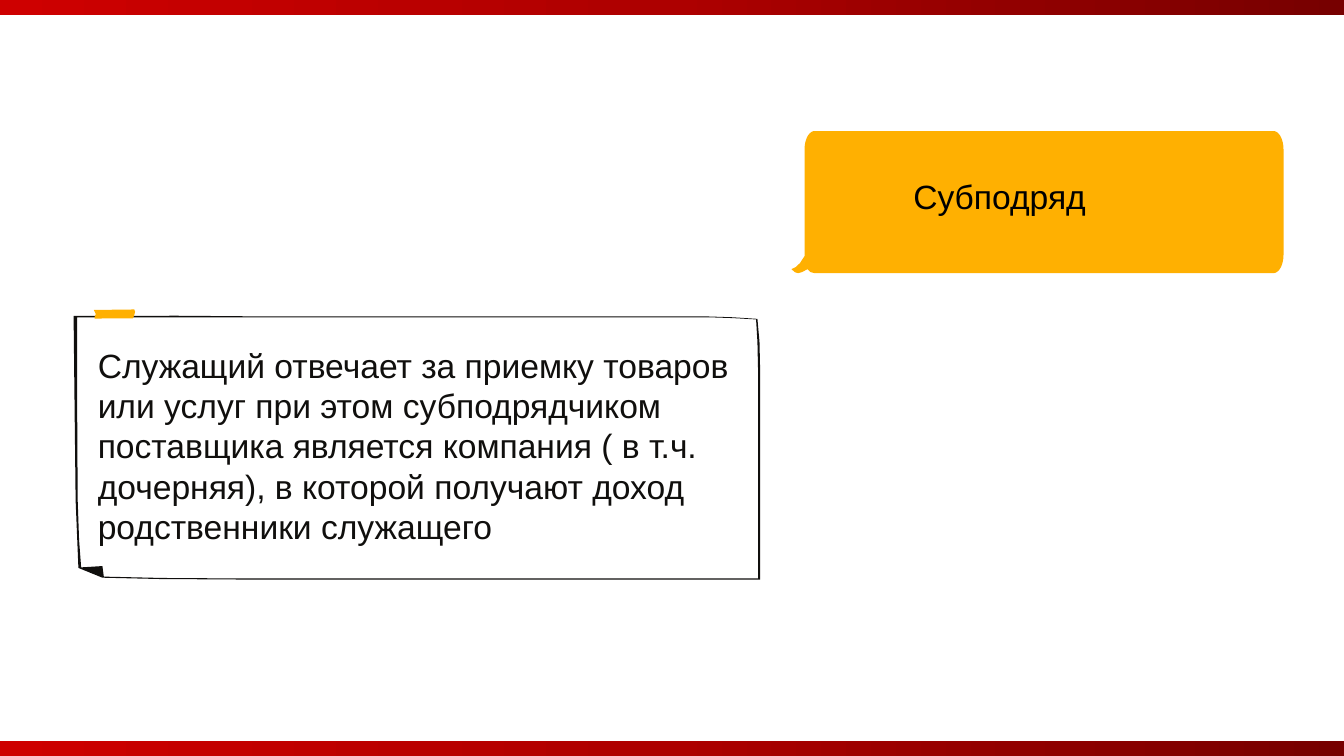
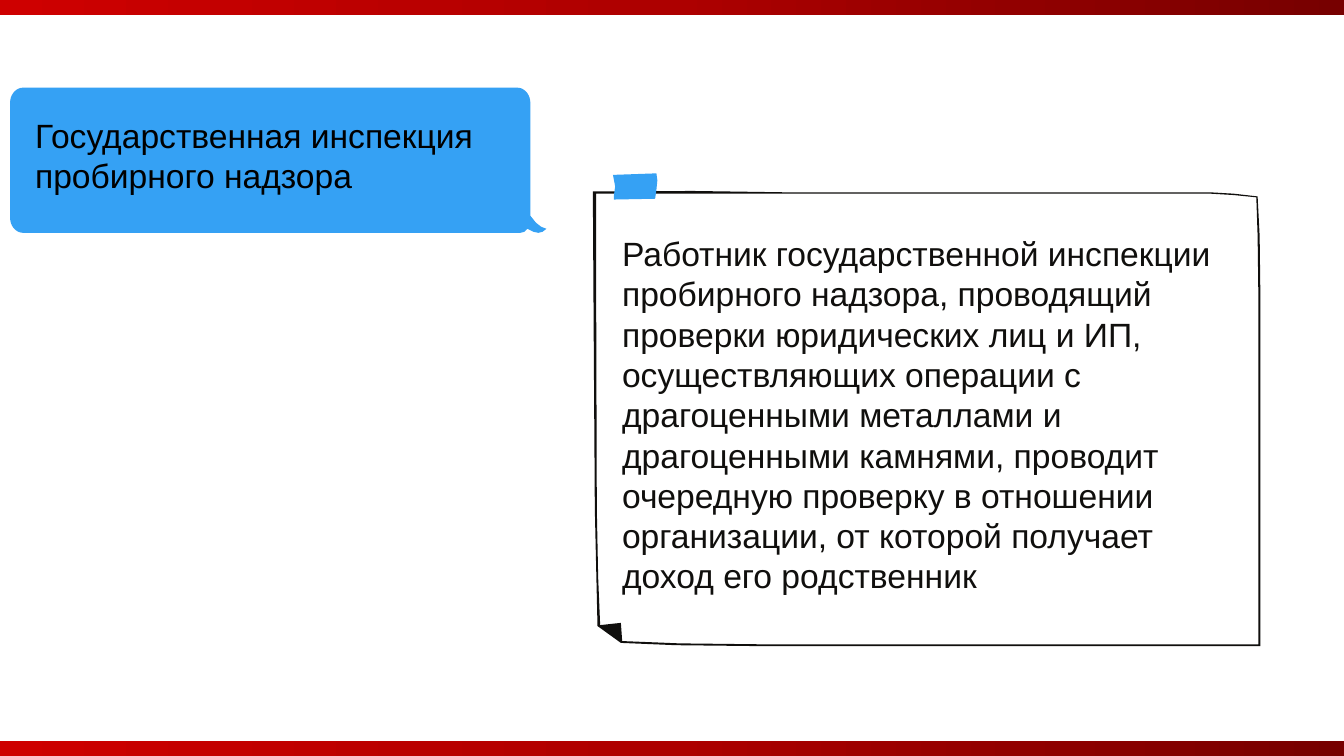
"""Builds two slides, each with a speech bubble naming a case and a paper note describing it."""
from copy import deepcopy
from dataclasses import dataclass
from math import cos, radians, sin

from pptx import Presentation
from pptx.dml.color import RGBColor
from pptx.enum.shapes import MSO_SHAPE
from pptx.util import Inches, Pt

RECTANGLE = MSO_SHAPE.RECTANGLE


@dataclass(frozen=True)
class Theme:
    font: str = "Arial"
    text_size: int = 24
    black: str = "000000"
    ink: str = "100F0D"
    paper: str = "FFFFFF"
    amber: str = "FFB001"
    blue: str = "35A1F4"
    band: tuple = ("CE0000", "AD0000", "770000")


THEME = Theme()
SLIDE_WIDTH, SLIDE_HEIGHT, BAND_HEIGHT = 13.33, 7.5, 0.15

NOTE_EDGE = [
    (100, 100), (25, 100), (12.5, 99.8), (4.2, 99.3), (0.7, 95.6), (0.3, 70), (0.1, 24),
    (0, 0.2), (15, 0.1), (29, 0.4), (92.5, 0.4), (96, 0.7), (99.6, 1.3), (99.9, 10), (100, 22),
]
NOTE_INSIDE = [
    (4.4, 98.9), (13, 99.4), (25, 99.6), (99.7, 99.6), (99.7, 22), (99.6, 10), (99.4, 1.5),
    (96, 1), (92.5, 0.7), (29, 0.7), (0.5, 0.7), (0.5, 24), (0.6, 70), (0.8, 85), (1.1, 95.4),
]
NOTE_FOLD = [(4.4, 98.9), (4.2, 94.9), (1.1, 95.4)]
TAPE_EDGE = [(98, 0), (100, 27), (98, 62), (95, 97), (2, 100), (2, 85), (5, 50), (0, 6)]

CASES = [
    {
        "accent": THEME.amber,
        "bubble": {"tip": 7.85, "top": 1.3, "width": 4.88, "height": 1.41,
                   "direction": 1, "tail": 0.13, "corner": (0.1, 0.18)},
        "title": "Субподряд",
        "title_box": (8.96, 1.7, 3.7, 0.5),
        "sheet_box": (0.73, 3.11, 6.75, 2.59),
        "note_box": (0.73, 3.13, 6.81, 2.62),
        "tape_box": (0.93, 3.07, 0.41, 0.09),
        "body": "Служащий отвечает за приемку товаров или услуг при этом субподрядчиком "
                "поставщика является компания ( в т.ч. дочерняя), в которой получают доход "
                "родственники служащего",
        "body_box": (0.97, 3.42, 6.33, 2.02),
    },
    {
        "accent": THEME.blue,
        "bubble": {"tip": 5.42, "top": 0.87, "width": 5.32, "height": 1.44,
                   "direction": -1, "tail": 0.16, "corner": (0.13, 0.15)},
        "title": "Государственная инспекция пробирного надзора",
        "title_box": (0.25, 1.09, 4.63, 0.91),
        "sheet_box": (5.88, 1.87, 6.62, 4.54),
        "note_box": (5.88, 1.89, 6.62, 4.52),
        "tape_box": (6.08, 1.72, 0.44, 0.26),
        "body": "Работник государственной инспекции пробирного надзора, проводящий проверки "
                "юридических лиц и ИП, осуществляющих операции с драгоценными металлами и "
                "драгоценными камнями, проводит очередную проверку в отношении организации, "
                "от которой получает доход его родственник",
        "body_box": (6.17, 2.31, 6.16, 3.64),
    },
]


def draw_outline(slide, contours, origin, unit, color):
    """Draw closed contours, scaled by unit (x, y) from origin, as one filled shape."""
    placed = [[(Inches(origin[0] + x * unit[0]), Inches(origin[1] + y * unit[1]))
               for x, y in contour] for contour in contours]
    builder = slide.shapes.build_freeform(*placed[0][0])
    builder.add_line_segments(placed[0][1:])
    for contour in placed[1:]:
        builder.move_to(*contour[0])
        builder.add_line_segments(contour[1:])
    shape = builder.convert_to_shape()
    shape.shadow.inherit = False
    shape.fill.solid()
    shape.fill.fore_color.rgb = RGBColor.from_string(color)
    shape.line.fill.background()


def add_text(slide, text, box, color, inset):
    """Add a wrapped text box with equal insets, across and down."""
    frame = slide.shapes.add_textbox(*map(Inches, box)).text_frame
    frame.word_wrap = True
    frame.margin_left = frame.margin_right = Inches(inset[0])
    frame.margin_top = frame.margin_bottom = Inches(inset[1])
    paragraph = frame.paragraphs[0]
    paragraph.text = text
    paragraph.font.name = THEME.font
    paragraph.font.size = Pt(THEME.text_size)
    paragraph.font.color.rgb = RGBColor.from_string(color)


presentation = Presentation()
presentation.slide_width = Inches(SLIDE_WIDTH)
presentation.slide_height = Inches(SLIDE_HEIGHT)

for case in CASES:
    slide = presentation.slides.add_slide(presentation.slide_layouts[6])

    for top in (0, SLIDE_HEIGHT - BAND_HEIGHT):
        band = slide.shapes.add_shape(
            RECTANGLE, 0, Inches(top), Inches(SLIDE_WIDTH), Inches(BAND_HEIGHT))
        band.shadow.inherit = False
        band.line.fill.background()
        band.fill.gradient()
        band.fill.gradient_angle = 0
        stop_list = band.fill._fill._gradFill.gsLst
        stop_list.insert(1, deepcopy(stop_list[0]))
        for stop, position, color in zip(band.fill.gradient_stops, (0, 0.5, 1), THEME.band):
            stop.position = position
            stop.color.rgb = RGBColor.from_string(color)

    bubble = case["bubble"]
    tail, width, height = bubble["tail"], bubble["width"], bubble["height"]
    radius_x, radius_y = bubble["corner"]
    bubble_edge = [(tail, height - 0.17)]
    for center_x, center_y, start in (
        (tail + radius_x, radius_y, 180),
        (width - radius_x, radius_y, 270),
        (width - radius_x, height - radius_y, 0),
    ):
        for angle in range(start, start + 91, 10):
            bubble_edge.append((center_x + radius_x * cos(radians(angle)),
                                center_y + radius_y * sin(radians(angle))))
    bubble_edge += [
        (tail + 0.1, height), (tail + 0.06, height - 0.01), (tail + 0.03, height - 0.04),
        (tail * 0.8, height - 0.01), (tail * 0.5, height), (tail * 0.25, height - 0.01),
        (0, height - 0.04), (tail * 0.33, height - 0.06), (tail * 0.65, height - 0.1),
    ]
    draw_outline(slide, [bubble_edge], (bubble["tip"], bubble["top"]),
                 (bubble["direction"], 1), case["accent"])
    add_text(slide, case["title"], case["title_box"], THEME.black, (0.1, 0.05))

    for contours, box, color in (
        ([NOTE_EDGE], case["sheet_box"], THEME.paper),
        ([NOTE_EDGE, NOTE_INSIDE, NOTE_FOLD], case["note_box"], THEME.ink),
        ([TAPE_EDGE], case["tape_box"], case["accent"]),
    ):
        draw_outline(slide, contours, box[:2], (box[2] / 100, box[3] / 100), color)
    add_text(slide, case["body"], case["body_box"], THEME.ink, (0, 0))

presentation.save("out.pptx")
